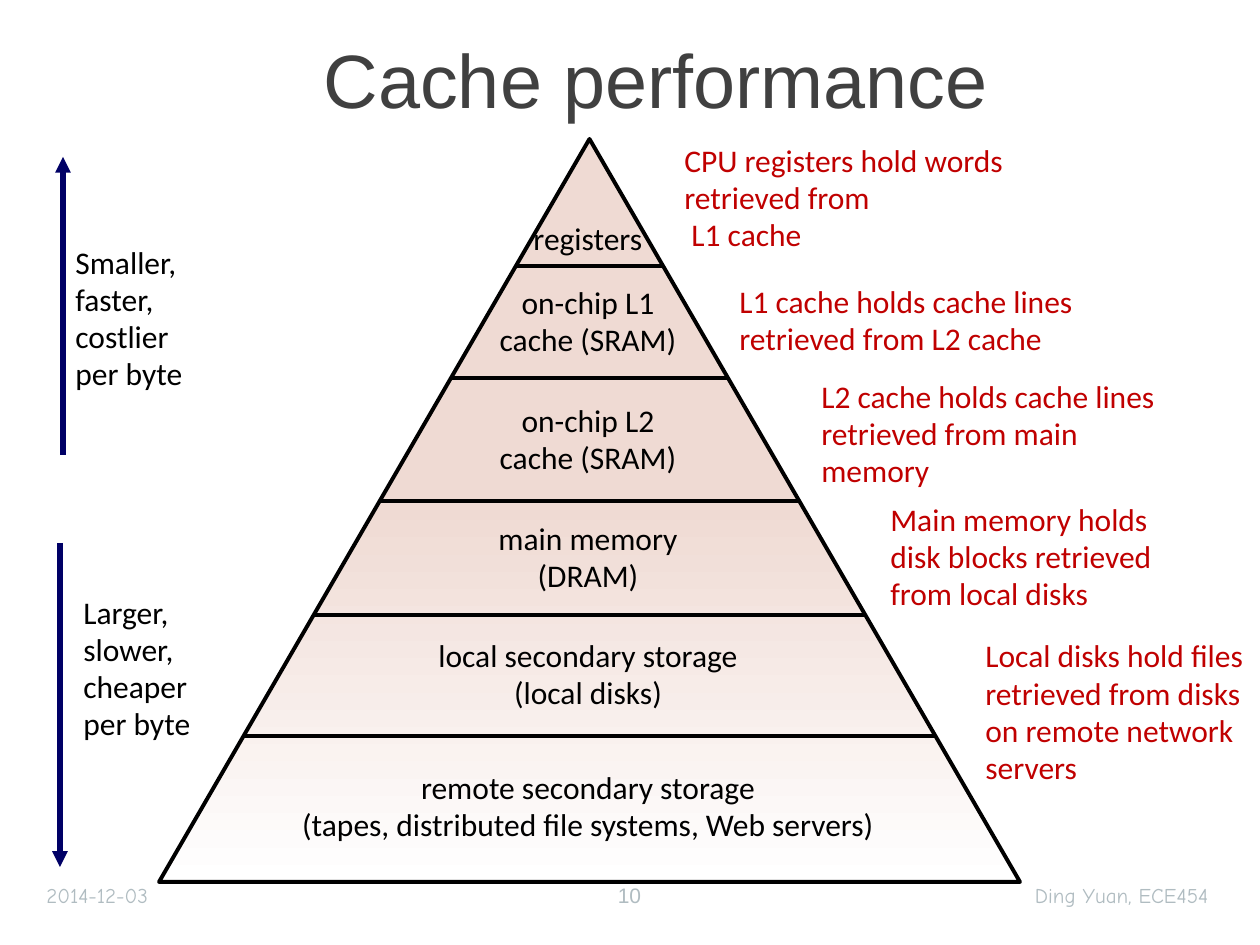
from dataclasses import dataclass

from lxml.etree import SubElement
from pptx import Presentation
from pptx.dml.color import RGBColor as Rgb
from pptx.enum.shapes import MSO_CONNECTOR as Connector, MSO_SHAPE as Shape
from pptx.enum.text import MSO_ANCHOR as Anchor, MSO_AUTO_SIZE as AutoSize, PP_ALIGN as Align
from pptx.oxml.ns import qn
from pptx.util import Emu, Pt

PYRAMID = (159, 139, 861, 743)
LEVEL_CENTRE = 588
LEVELS = [
    (214, 137, 50, ["registers"]),
    (268, 207, 107, ["on-chip L1", "cache (SRAM)"]),
    (386, 207, 107, ["on-chip L2", "cache (SRAM)"]),
    (504, 209, 107, ["main memory", "(DRAM)"]),
    (621, 333, 107, ["local secondary storage", "(local disks)"]),
    (753, 615, 107, ["remote secondary storage", "(tapes, distributed file systems, Web servers)"]),
]
DIVIDERS = [266, 378, 501, 615, 736]
NOTES = [
    ((672, 136, 402, 125), "CPU registers hold words retrieved from\n L1 cache"),
    ((727, 277, 391, 88), "L1 cache holds cache lines retrieved from L2 cache"),
    ((809, 372, 363, 125), "L2 cache holds cache lines retrieved from main memory"),
    ((878, 495, 329, 125), "Main memory holds disk blocks retrieved from local disks"),
    ((973, 631, 285, 163), "Local disks hold files retrieved from disks on remote network servers"),
]
TRENDS = [
    ((63, 209, 135, 219), ["Smaller,", "faster,", "costlier", "per byte"], (63, 455, 157)),
    ((71, 559, 139, 219), ["Larger,", "slower,", "cheaper", "per byte"], (60, 543, 867)),
]


@dataclass(frozen=True)
class Style:
    """Font, size and colour of a kind of text."""
    font: str
    size: float
    color: str


@dataclass(frozen=True)
class Theme:
    """Colours and text styles of the slide."""
    title: Style = Style("Arial", 43.2, "404040")
    body: Style = Style("Calibri", 18, "000000")
    note: Style = Style("Calibri", 18, "C00000")
    footer: Style = Style("Comic Neue", 12, "B0BCC1")
    number: Style = Style("Arial", 12, "B0BCC1")
    outline: str = "000000"
    arrow: str = "000066"
    pyramid_top: str = "EFDAD3"
    pyramid_base: str = "FFFFFF"


THEME = Theme()


def px(value):
    """Turn pixels into EMU."""
    return Emu(round(value * 914400 / 126))


def add_text(page, place, lines, style, align=Align.LEFT, wrap=True, spacing=None):
    """Add a vertically centred text box with one paragraph per line."""
    box = page.shapes.add_textbox(*map(px, place))
    frame = box.text_frame
    frame.word_wrap = wrap
    frame.vertical_anchor = Anchor.MIDDLE
    frame.auto_size = AutoSize.SHAPE_TO_FIT_TEXT if spacing else AutoSize.NONE
    for index, line in enumerate(lines):
        para = frame.add_paragraph() if index else frame.paragraphs[0]
        para.alignment = align
        para.line_spacing = spacing
        for part, text in enumerate(line.split("\n")):
            if part:
                para.add_line_break()
            span = para.add_run()
            span.text = text
            span.font.name = style.font
            span.font.size = Pt(style.size)
            span.font.color.rgb = Rgb.from_string(style.color)


def add_line(page, start, end, color, width, arrow=False):
    """Add a straight line, with an arrowhead at its end if asked."""
    line = page.shapes.add_connector(Connector.STRAIGHT, *map(px, start + end))
    line.line.color.rgb = Rgb.from_string(color)
    line.line.width = Pt(width)
    properties = line.line._get_or_add_ln()
    if arrow:
        SubElement(properties, qn("a:tailEnd"), type="triangle")
    SubElement(properties.getparent(), qn("a:effectLst"))


def add_pyramid(page):
    """Add the gradient triangle behind the storage levels."""
    pyramid = page.shapes.add_shape(Shape.ISOSCELES_TRIANGLE, *map(px, PYRAMID))
    pyramid.shadow.inherit = False
    pyramid.fill.gradient()
    pyramid.fill.gradient_angle = 270
    stops = [(0.49, THEME.pyramid_top), (1, THEME.pyramid_base)]
    for stop, (position, color) in zip(pyramid.fill.gradient_stops, stops):
        stop.position = position
        stop.color.rgb = Rgb.from_string(color)
    pyramid.line.color.rgb = Rgb.from_string(THEME.outline)
    pyramid.line.width = Pt(2.25)


def add_divider(page, y):
    """Add a line across the pyramid from edge to edge."""
    left, top, width, height = PYRAMID
    centre = left + width // 2
    half = round((y - top) * width / height / 2)
    add_line(page, (centre - half, y), (centre + half, y), THEME.outline, 2)


def main():
    """Build the slide and save it."""
    deck = Presentation()
    deck.slide_width, deck.slide_height = px(1260), px(945)
    page = deck.slides.add_slide(deck.slide_layouts[6])
    add_text(page, (55, 24, 1201, 108), ["Cache performance"], THEME.title, Align.CENTER)
    add_pyramid(page)
    for y in DIVIDERS:
        add_divider(page, y)
    for top, width, height, lines in LEVELS:
        place = (LEVEL_CENTRE - width / 2, top, width, height)
        add_text(page, place, lines, THEME.body, Align.CENTER, wrap=False, spacing=0.98)
    for place, text in NOTES:
        add_text(page, place, [text], THEME.note, spacing=0.98)
    for place, lines, (x, start, end) in TRENDS:
        add_text(page, place, lines, THEME.body, wrap=False, spacing=0.98)
        add_line(page, (x, start), (x, end), THEME.arrow, 3, arrow=True)
    add_text(page, (34, 878, 294, 35), ["2014-12-03"], THEME.footer)
    add_text(page, (822, 878, 399, 35), ["Ding Yuan, ECE454"], THEME.footer, Align.RIGHT)
    add_text(page, (577, 876, 105, 38), ["10"], THEME.number, Align.CENTER)
    deck.save("out.pptx")


if __name__ == "__main__":
    main()
